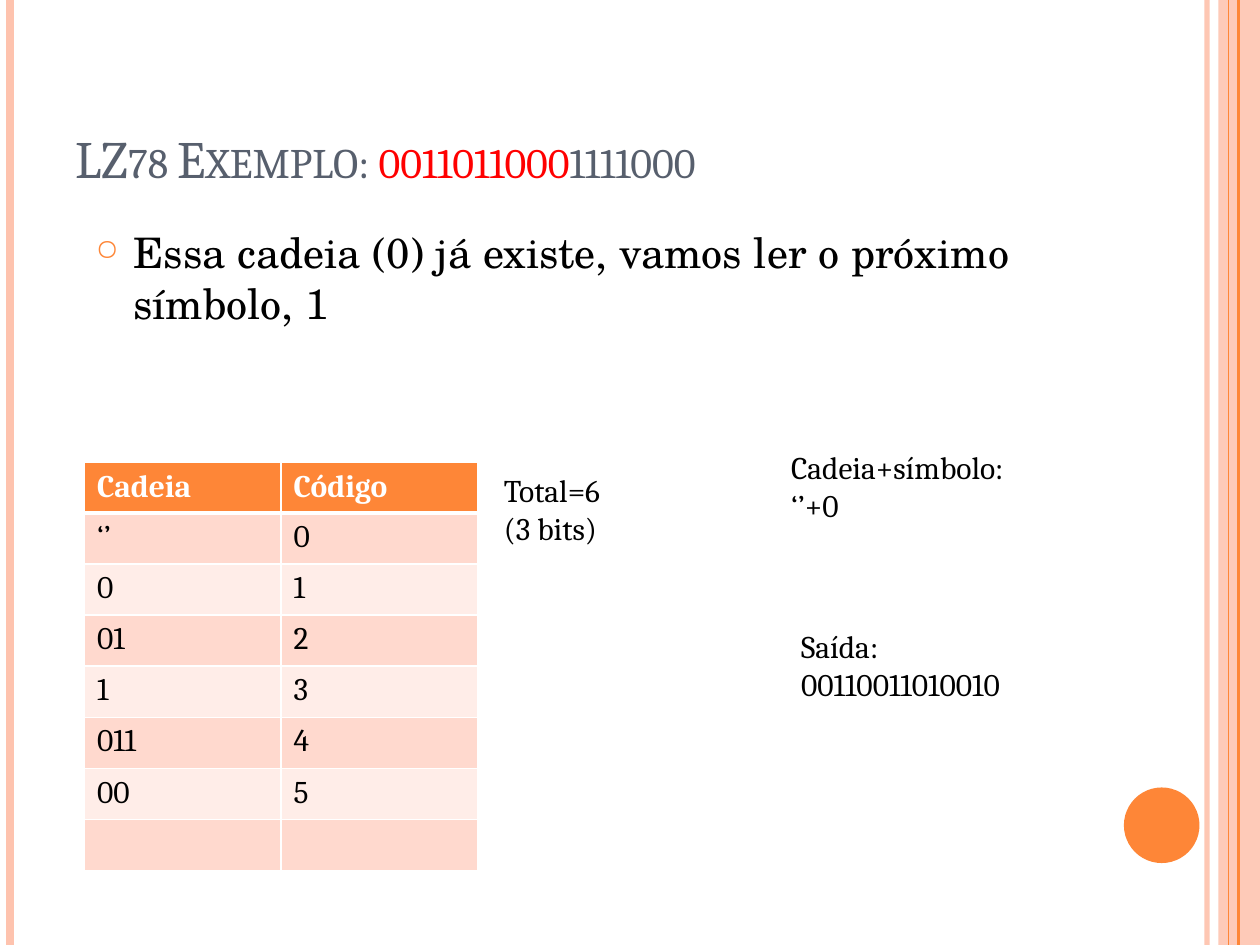
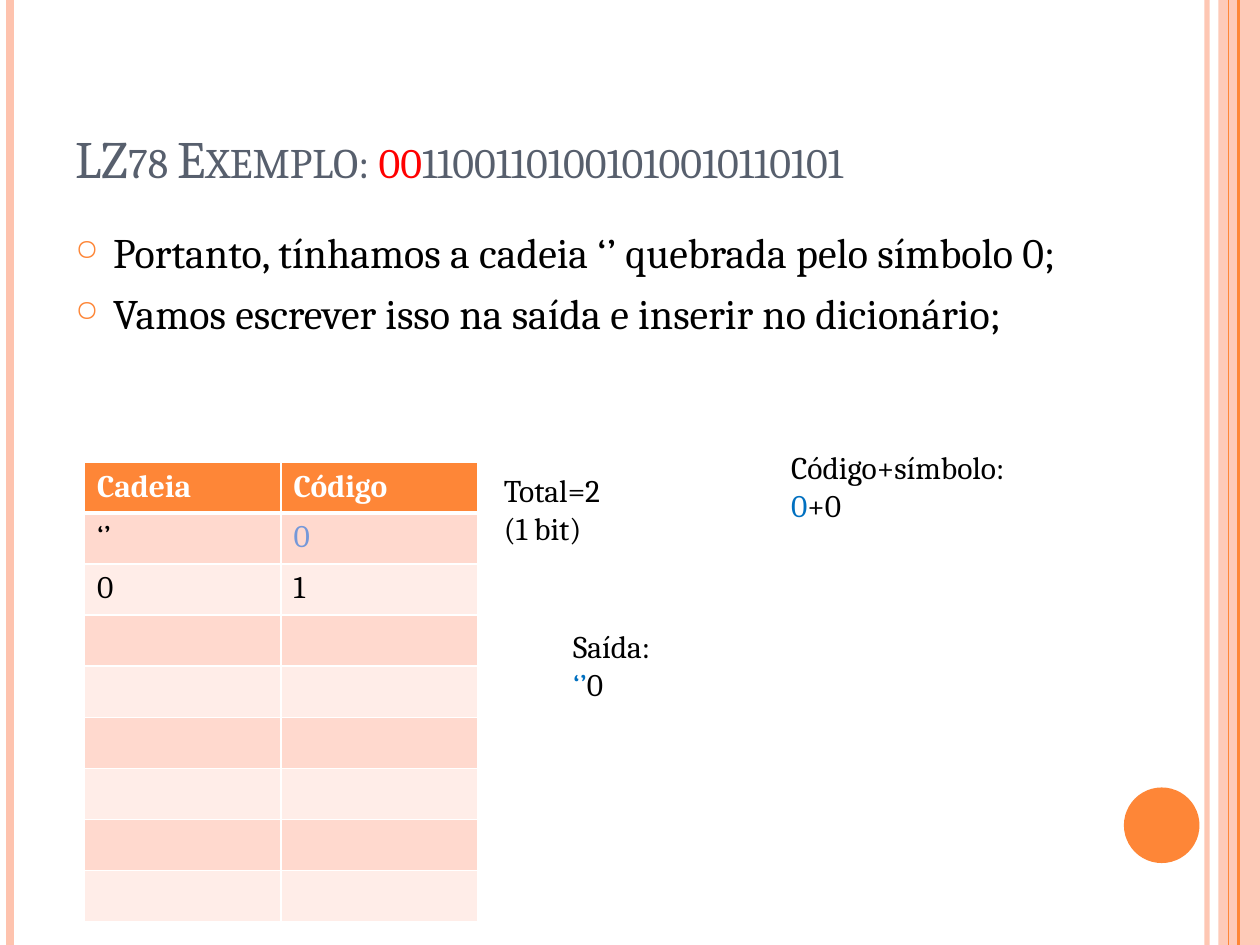
from dataclasses import dataclass

from lxml.etree import SubElement
from pptx import Presentation
from pptx.dml.color import RGBColor
from pptx.enum.shapes import MSO_CONNECTOR as CONN, MSO_SHAPE as SHAPE
from pptx.enum.text import MSO_ANCHOR as ANCHOR, MSO_AUTO_SIZE as AUTO, PP_ALIGN as ALIGN
from pptx.oxml import parse_xml
from pptx.oxml.ns import nsdecls, qn
from pptx.util import Inches, Pt


@dataclass(frozen=True)
class Theme:
    orange: str = "FE8637"
    peach: str = "FEC3AE"
    band_dark: str = "FFD9CE"
    band_light: str = "FFEDE8"
    slate: str = "575F6D"
    red: str = "FF0000"
    blue: str = "0070C0"
    pale_blue: str = "7598D9"
    black: str = "000000"
    white: str = "FFFFFF"
    font: str = "Cambria"
    body_font: str = "TeX Gyre Schola"
    title_size: int = 30
    body_size: int = 24
    small_size: int = 18


T = Theme()
ROW_H = 3.65 / 9
HEADER_H = 0.39
COL_W = 1.56


def write(tf, paragraphs, size=T.small_size, color=T.black, font=T.font, bold=False,
          small_caps=False, bullet=False, align=ALIGN.LEFT):
    """Fill a text frame; a paragraph is a string or a list of (text, colour) runs."""
    for i, runs in enumerate(paragraphs):
        p = tf.paragraphs[0] if i == 0 else tf.add_paragraph()
        p.alignment = align
        if bullet:
            p.space_before = Pt(6)
            pPr = p._p.get_or_add_pPr()
            pPr.set("marL", str(Inches(0.3)))
            pPr.set("indent", str(-Inches(0.3)))
            SubElement(SubElement(pPr, qn("a:buClr")), qn("a:srgbClr"), val=T.orange)
            SubElement(pPr, qn("a:buSzPct"), val="70000")
            SubElement(pPr, qn("a:buChar"), char="○")
        for text, run_color in [(runs, color)] if isinstance(runs, str) else runs:
            r = p.add_run()
            r.text = text
            r.font.name, r.font.size, r.font.bold = font, Pt(size), bold
            r.font.color.rgb = RGBColor.from_string(run_color)
            if small_caps:
                r._r.get_or_add_rPr().set("cap", "small")


def paint(fill, color, opacity=100):
    fill.solid()
    fill.fore_color.rgb = RGBColor.from_string(color)
    if opacity < 100:
        SubElement(fill._xPr.find(".//" + qn("a:srgbClr")), qn("a:alpha"), val=str(opacity * 1000))


# x, colour, width in points, opacity
stripes = [(9.58, T.peach, 3, 93), (0.08, T.peach, 4.5, 100),
           (9.83, T.orange, 1.5, 100), (9.75, T.orange, 0.75, 100)]
# preset, box, colour, opacity
ornaments = [(SHAPE.RECTANGLE, (9.67, 0, 0.33, 7.5), T.peach, 87),
             (SHAPE.OVAL, (8.92, 6.25, 0.6, 0.6), T.orange, 100)]

slides = [
    dict(
        read="0011011000", unread="1111000",
        body=["Essa cadeia (0) já existe, vamos ler o próximo símbolo, 1"],
        body_box=(0.66, 1.75, 8.35, 5.33),
        body_format=dict(font=T.body_font),
        dictionary=["‘’", "0", "01", "1", "011", "00"], empty_rows=1, code_colors={},
        notes=[((6.18, 3.51, 2.13, 0.71), ["Cadeia+símbolo:", "‘’+0"]),
               ((6.26, 4.93, 2.17, 0.71), ["Saída:", "00110011010010"]),
               ((3.9, 3.69, 1.11, 0.71), ["Total=6", "(3 bits)"])],
    ),
    dict(
        read="00", unread="11001101001010010110101",
        body=["Portanto, tínhamos a cadeia ‘’ quebrada pelo símbolo 0;",
              "Vamos escrever isso na saída e inserir no dicionário;"],
        body_box=(0.5, 1.75, 8.83, 5.33),
        body_format=dict(align=ALIGN.JUSTIFY),
        dictionary=["‘’", "0"], empty_rows=6, code_colors={0: T.pale_blue},
        notes=[((6.18, 3.51, 2.11, 0.71),
                ["Código+símbolo:", [("0", T.blue), ("+0", T.black)]]),
               ((4.45, 4.93, 0.94, 0.71), ["Saída:", [("‘’", T.blue), ("0", T.black)]]),
               ((3.9, 3.69, 1.11, 0.71), ["Total=2", "(1 bit)"])],
    ),
]

prs = Presentation()
prs.slide_width, prs.slide_height = Inches(10), Inches(7.5)

for content in slides:
    s = prs.slides.add_slide(prs.slide_layouts[6])

    # Side decoration; the thin stripe at 9.75 lies over the band
    for preset, box, color, opacity in ornaments:
        sp = s.shapes.add_shape(preset, *map(Inches, box))
        sp.shadow.inherit = False
        paint(sp.fill, color, opacity)
        sp.line.fill.background()
    for x, color, width, opacity in stripes:
        line = s.shapes.add_connector(CONN.STRAIGHT, Inches(x), 0, Inches(x), prs.slide_height)
        line.line.width = Pt(width)
        paint(line.line.fill, color, opacity)
        SubElement(line._element.spPr, qn("a:effectLst"))

    # Title, with the symbols already read in red
    tf = s.shapes.add_textbox(*map(Inches, (0.5, 0.3, 8.17, 1.25))).text_frame
    tf.word_wrap = True
    tf.vertical_anchor = ANCHOR.BOTTOM
    title = [("LZ78 Exemplo: ", T.slate), (content["read"], T.red), (content["unread"], T.slate)]
    write(tf, [title], size=T.title_size, small_caps=True)

    tf = s.shapes.add_textbox(*map(Inches, content["body_box"])).text_frame
    tf.word_wrap = True
    write(tf, content["body"], size=T.body_size, bullet=True, **content["body_format"])

    # Dictionary table: each string's code is its index
    rows = [("Cadeia", "Código")]
    rows += [(string, str(code)) for code, string in enumerate(content["dictionary"])]
    rows += [("", "")] * content["empty_rows"]
    height = HEADER_H + ROW_H * (len(rows) - 1)
    table = s.shapes.add_table(len(rows), 2, Inches(0.67), Inches(3.67),
                               Inches(2 * COL_W), Inches(height)).table
    for column in table.columns:
        column.width = Inches(COL_W)
    for i, row in enumerate(rows):
        header = i == 0
        table.rows[i].height = Inches(HEADER_H if header else ROW_H)
        band = T.orange if header else T.band_dark if i % 2 else T.band_light
        for j, text in enumerate(row):
            cell = table.cell(i, j)
            tcPr = cell._tc.get_or_add_tcPr()
            thick = {"lnB": i == 0, "lnT": i == 1}
            for side in ("lnL", "lnR", "lnT", "lnB"):
                width = Pt(3 if thick.get(side) else 1)
                tcPr.append(parse_xml(
                    f'<a:{side} {nsdecls("a")} w="{width}"><a:solidFill>'
                    f'<a:srgbClr val="{T.white}"/></a:solidFill></a:{side}>'))
            paint(cell.fill, band)
            code_color = content["code_colors"].get(i - 1, T.black) if j else T.black
            if text:
                write(cell.text_frame, [text], bold=header,
                      color=T.white if header else code_color)

    for box, lines in content["notes"]:
        tf = s.shapes.add_textbox(*map(Inches, box)).text_frame
        tf.word_wrap = False
        tf.auto_size = AUTO.SHAPE_TO_FIT_TEXT
        write(tf, lines)

prs.save("out.pptx")
